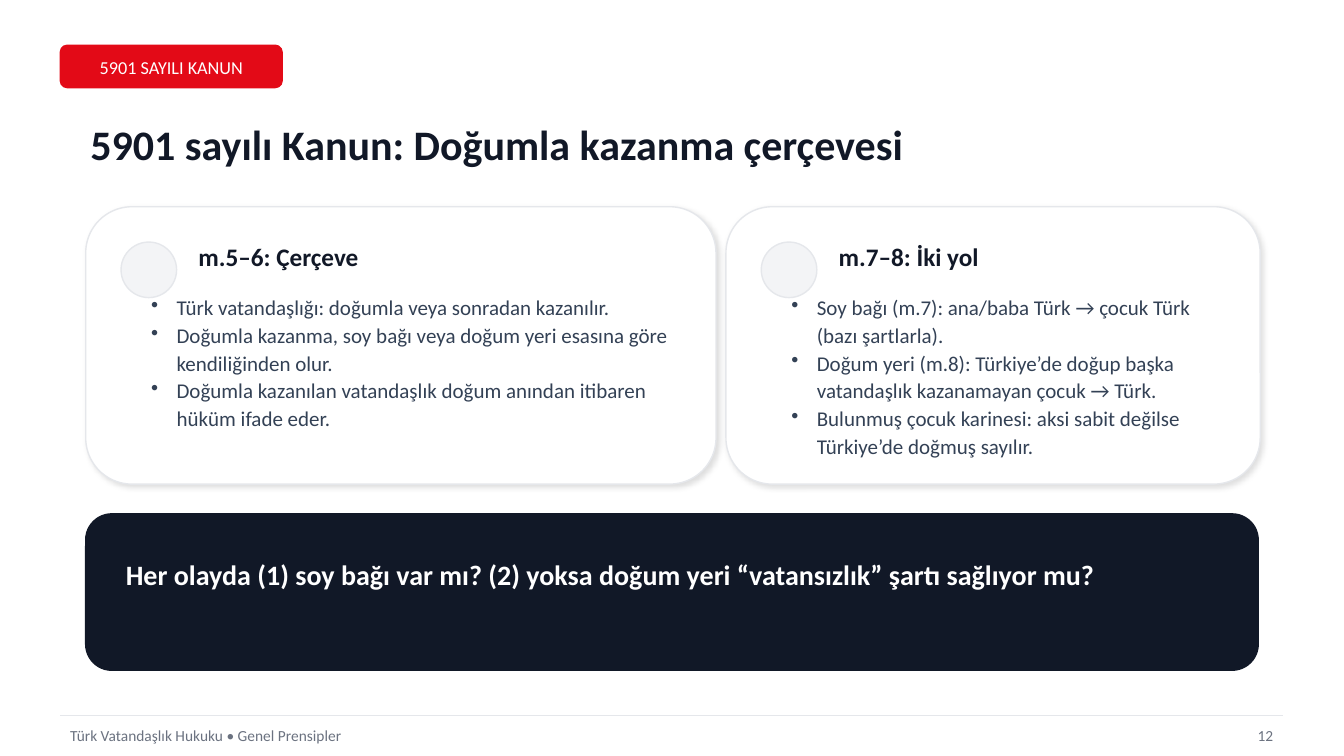
import pptx
import pptx.dml.color
import pptx.enum.shapes
import pptx.enum.text
import pptx.oxml
import pptx.oxml.ns
import pptx.util

Cm = pptx.util.Cm
Pt = pptx.util.Pt
Shape = pptx.enum.shapes.MSO_SHAPE
Align = pptx.enum.text.PP_ALIGN
Anchor = pptx.enum.text.MSO_ANCHOR

RED, NAVY, WHITE = "E30A17", "111827", "FFFFFF"
BORDER, PALE, SLATE, GRAY = "E5E7EB", "F3F4F6", "334155", "6B7280"
NAMESPACE = pptx.oxml.ns.nsdecls("a")
CARD_SHADOW = (
    f'<a:outerShdw {NAMESPACE} blurRad="{Pt(4)}" dist="{Pt(2)}" dir="2700000" '
    'algn="tl" rotWithShape="0"><a:srgbClr val="000000">'
    '<a:alpha val="12000"/></a:srgbClr></a:outerShdw>'
)


def color(value):
    return pptx.dml.color.RGBColor.from_string(value)


class SlideBuilder:
    font = "Calibri"
    card_top, card_height = 5.21, 6.99

    def __init__(self, page):
        self.page = page

    def shape(self, kind, left, top, width, height, fill, line, shadow=False):
        shape = self.page.shapes.add_shape(
            kind, Cm(left), Cm(top), Cm(width), Cm(height))
        shape.fill.solid()
        shape.fill.fore_color.rgb = color(fill)
        shape.line.color.rgb = color(line)
        shape.line.width = Pt(1)
        shape.shadow.inherit = False
        if shadow:
            effects = shape._element.spPr.find(pptx.oxml.ns.qn("a:effectLst"))
            effects.append(pptx.oxml.parse_xml(CARD_SHADOW))

    def text(self, left, top, width, height, words, size, ink, bold=False,
             align=Align.LEFT, anchor=Anchor.MIDDLE):
        box = self.page.shapes.add_textbox(
            Cm(left), Cm(top), Cm(width), Cm(height))
        frame = box.text_frame
        frame.word_wrap = True
        frame.vertical_anchor = anchor
        frame.text = words
        for para in frame.paragraphs:
            para.alignment = align
            for span in para.runs:
                span.font.name = self.font
                span.font.size = Pt(size)
                span.font.bold = bold
                span.font.color.rgb = color(ink)
        return frame

    def bullets(self, left, top, width, height, items):
        frame = self.text(left, top, width, height, "\n".join(items), 15,
                          SLATE, anchor=Anchor.TOP)
        for para in frame.paragraphs:
            para.line_spacing = 1.1
            properties = para._p.get_or_add_pPr()
            properties.set("marL", str(Cm(0.64)))
            properties.set("indent", str(-Cm(0.64)))
            properties.append(pptx.oxml.parse_xml(
                f'<a:buChar {NAMESPACE} char="•"/>'))

    def card(self, left, width, heading, items):
        top = self.card_top
        self.shape(Shape.ROUNDED_RECTANGLE, left, top, width,
                   self.card_height, WHITE, BORDER, shadow=True)
        self.shape(Shape.OVAL, left + 0.89, top + 0.89, 1.4, 1.4, PALE, BORDER)
        self.text(left + 2.59, top + 0.81, width - 3.18, 0.89, heading,
                  18, NAVY, bold=True)
        self.bullets(left + 1.4, top + 2.03, width - 2.29, 4.32, items)

    def rule(self, left, right, top):
        line = self.page.shapes.add_connector(
            pptx.enum.shapes.MSO_CONNECTOR.STRAIGHT,
            Cm(left), Cm(top), Cm(right), Cm(top))
        line.line.color.rgb = color(BORDER)
        line.line.width = Pt(1)
        line._element.spPr.append(
            pptx.oxml.parse_xml(f"<a:effectLst {NAMESPACE}/>"))


def main():
    deck = pptx.Presentation()
    deck.slide_width, deck.slide_height = Cm(33.86), Cm(19.05)
    build = SlideBuilder(deck.slides.add_slide(deck.slide_layouts[6]))

    # Badge and title
    build.shape(Shape.ROUNDED_RECTANGLE, 1.52, 1.14, 5.59, 1.07, RED, RED)
    build.text(1.52, 1.32, 5.59, 0.76, "5901 SAYILI KANUN", 13, WHITE,
               align=Align.CENTER)
    build.text(2.03, 2.79, 29.79, 1.65,
               "5901 sayılı Kanun: Doğumla kazanma çerçevesi",
               30, NAVY, bold=True)

    # Cards
    build.card(2.16, 15.88, "m.5–6: Çerçeve", [
        "Türk vatandaşlığı: doğumla veya sonradan kazanılır.",
        "Doğumla kazanma, soy bağı veya doğum yeri esasına göre "
        "kendiliğinden olur.",
        "Doğumla kazanılan vatandaşlık doğum anından itibaren "
        "hüküm ifade eder.",
    ])
    build.card(18.29, 13.46, "m.7–8: İki yol", [
        "Soy bağı (m.7): ana/baba Türk → çocuk Türk (bazı şartlarla).",
        "Doğum yeri (m.8): Türkiye’de doğup başka vatandaşlık "
        "kazanamayan çocuk → Türk.",
        "Bulunmuş çocuk karinesi: aksi sabit değilse Türkiye’de "
        "doğmuş sayılır.",
    ])

    # Key question
    build.shape(Shape.ROUNDED_RECTANGLE, 2.16, 12.95, 29.54, 3.94, NAVY, NAVY)
    build.text(2.92, 13.46, 28.02, 2.03,
               "Her olayda (1) soy bağı var mı? (2) yoksa doğum yeri "
               "“vatansızlık” şartı sağlıyor mu?", 20, WHITE, bold=True)

    # Footer
    build.rule(1.52, 32.33, 18.03)
    build.text(1.52, 18.16, 29.29, 0.76,
               "Türk Vatandaşlık Hukuku • Genel Prensipler", 11, GRAY)
    build.text(31.06, 18.16, 1.27, 0.76, "12", 11, GRAY, align=Align.RIGHT)

    deck.save("out.pptx")


if __name__ == "__main__":
    main()
